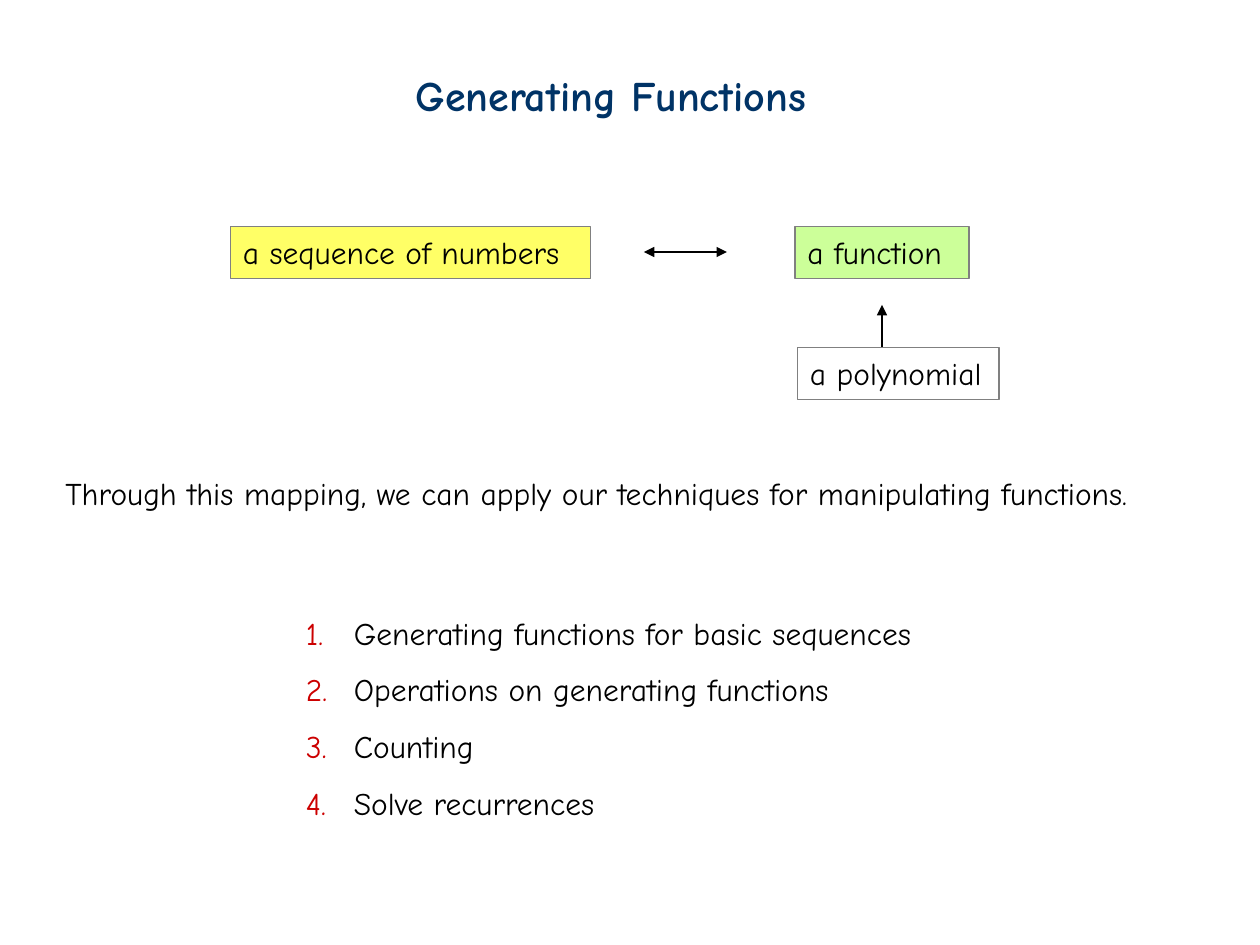
from dataclasses import dataclass

from lxml.etree import SubElement
from pptx import Presentation
from pptx.dml.color import RGBColor as Rgb
from pptx.enum.shapes import MSO_CONNECTOR as Connector, MSO_SHAPE as Preset
from pptx.enum.text import MSO_ANCHOR as Anchor, PP_ALIGN as Align
from pptx.oxml.ns import qn
from pptx.util import Inches, Pt

COLUMNS, ROWS = 100, 75


@dataclass(frozen=True)
class Theme:
    font: str = "Comic Neue"
    title_size: int = 24
    body_size: int = 18
    stroke: float = 0.75
    title: str = "003366"
    ink: str = "000000"
    border: str = "808080"
    number: str = "CC0000"
    sequence: str = "FFFF66"
    function: str = "CCFF99"


THEME = Theme()


def grid(*cells):
    return [Inches(cell * 10 / COLUMNS) for cell in cells]


def apply_format(target, values):
    for name, value in values.items():
        setattr(target, name, value)


def write(holder, lines, size=THEME.body_size, color=THEME.ink, bold=False):
    frame = holder.text_frame
    apply_format(frame, {"word_wrap": True, "vertical_anchor": Anchor.TOP})
    frame.text = "\n".join(lines)
    for paragraph in frame.paragraphs:
        paragraph.alignment = Align.LEFT
        font = paragraph.runs[0].font
        apply_format(font, {"name": THEME.font, "size": Pt(size), "bold": bold})
        font.color.rgb = Rgb.from_string(color)
    return frame


def add_text(slide, area, *lines, **style):
    return write(slide.shapes.add_textbox(*grid(*area)), lines, **style)


def add_box(slide, area, label, fill=None):
    box = slide.shapes.add_shape(Preset.RECTANGLE, *grid(*area))
    box.shadow.inherit = False
    if fill:
        box.fill.solid()
        box.fill.fore_color.rgb = Rgb.from_string(fill)
    else:
        box.fill.background()
    box.line.color.rgb = Rgb.from_string(THEME.border)
    box.line.width = Pt(THEME.stroke)
    write(box, [label])


def add_arrow(slide, start, end, tips):
    arrow = slide.shapes.add_connector(Connector.STRAIGHT, *grid(*start, *end))
    arrow.line.color.rgb = Rgb.from_string(THEME.ink)
    arrow.line.width = Pt(THEME.stroke)
    properties = arrow._element.spPr
    for tip in tips:
        SubElement(properties.find(qn("a:ln")), qn(f"a:{tip}"), type="triangle")
    SubElement(properties, qn("a:effectLst"))


def add_numbered_list(slide, area, *topics):
    frame = add_text(slide, area, *topics)
    hanging = Inches(0.38)
    for paragraph in frame.paragraphs:
        paragraph.line_spacing = 1.5
        properties = paragraph._p.get_or_add_pPr()
        properties.set("marL", str(hanging))
        properties.set("indent", str(-hanging))
        number_color = SubElement(properties, qn("a:buClr"))
        SubElement(number_color, qn("a:srgbClr"), val=THEME.number)
        SubElement(properties, qn("a:buFont"), typeface=THEME.font)
        SubElement(properties, qn("a:buAutoNum"), type="arabicPeriod")


def main():
    deck = Presentation()
    apply_format(deck, dict(zip(("slide_width", "slide_height"), grid(COLUMNS, ROWS))))
    slide = deck.slides.add_slide(deck.slide_layouts[6])

    add_text(slide, (32, 5, 35.5, 5), "Generating Functions",
             size=THEME.title_size, color=THEME.title, bold=True)

    add_box(slide, (18.3, 18, 28.6, 4.1), "a sequence of numbers", THEME.sequence)
    add_box(slide, (63.1, 18, 13.8, 4.1), "a function", THEME.function)
    add_arrow(slide, (51.1, 20), (57.7, 20), ("headEnd", "tailEnd"))
    add_box(slide, (63.3, 27.6, 16, 4.1), "a polynomial")
    add_arrow(slide, (70, 27.5), (70, 24.2), ("tailEnd",))

    add_text(slide, (4.2, 37.1, 92.4, 4),
             "Through this mapping, we can apply our techniques for manipulating functions.")
    add_numbered_list(slide, (23.3, 46.7, 53.8, 19.1),
                      "Generating functions for basic sequences",
                      "Operations on generating functions",
                      "Counting",
                      "Solve recurrences")
    deck.save("out.pptx")


if __name__ == "__main__":
    main()
